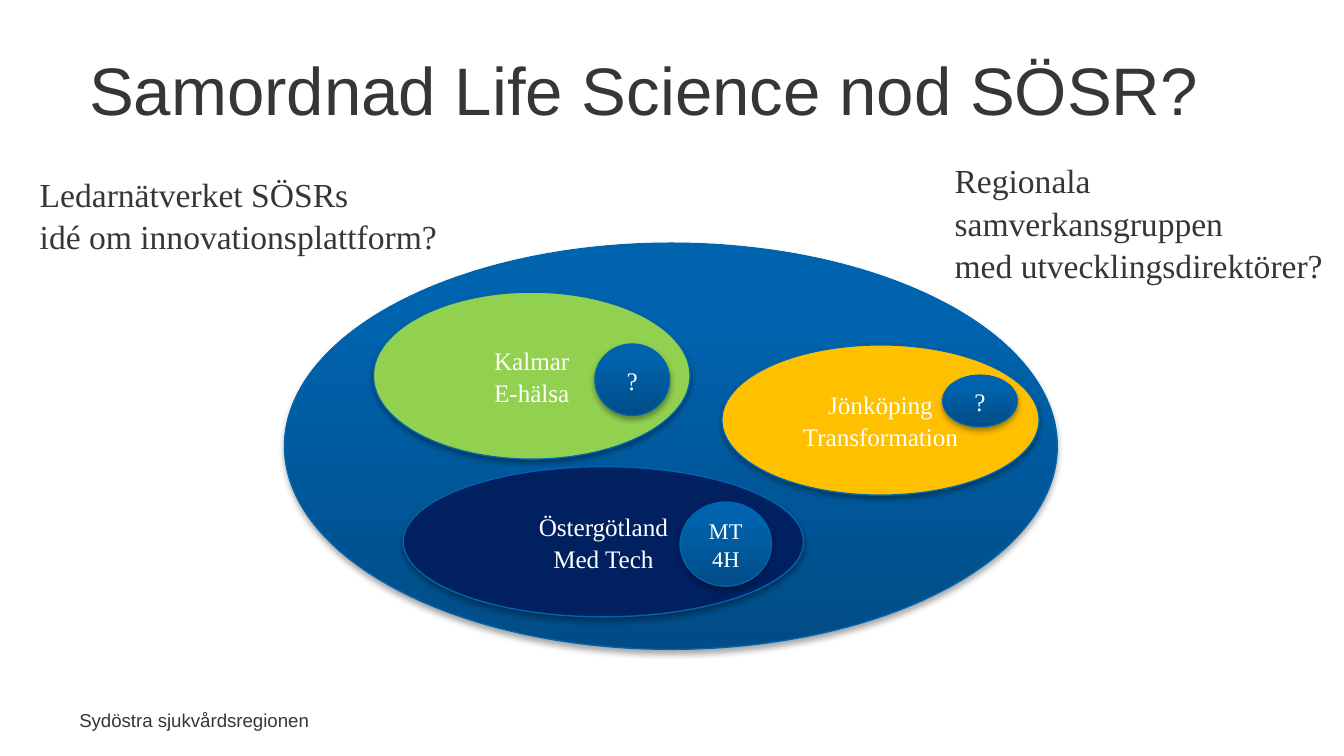
from dataclasses import dataclass

from lxml.etree import SubElement
from pptx import Presentation
from pptx.dml.color import RGBColor as Color
from pptx.enum.shapes import MSO_SHAPE as Shape
from pptx.enum.text import MSO_ANCHOR as Anchor, MSO_AUTO_SIZE as AutoSize, PP_ALIGN as Align
from pptx.oxml.ns import qn
from pptx.util import Pt


@dataclass(frozen=True)
class Theme:
    ink: str = "363636"
    white: str = "FFFFFF"
    outline: str = "0064AF"
    deep: str = "004C86"
    bright: str = "0063AD"
    green: str = "92D050"
    amber: str = "FFC000"
    navy: str = "002060"
    sans: str = "Arial"
    serif: str = "Times New Roman"
    title: float = 36
    note: float = 18
    label: float = 13.5
    small: float = 12
    footer: float = 10
    spacing: float = 1.05


THEME = Theme()


def write(frame, text, font, size, color, align=Align.LEFT, spacing=1.0):
    frame.text = text
    for para in frame.paragraphs:
        para.alignment = align
        para.line_spacing = spacing
        para.font.name = font
        para.font.size = Pt(size)
        para.font.color.rgb = Color.from_string(color)


def add_title(page, text, *bounds):
    title = page.shapes.title
    title.left, title.top, title.width, title.height = map(Pt, bounds)
    title.text_frame.vertical_anchor = Anchor.MIDDLE
    write(title.text_frame, text, THEME.sans, THEME.title, THEME.ink)


def add_text(page, text, bounds, font, size, **layout):
    box = page.shapes.add_textbox(*map(Pt, bounds))
    box.text_frame.word_wrap = False
    box.text_frame.auto_size = AutoSize.SHAPE_TO_FIT_TEXT
    write(box.text_frame, text, font, size, THEME.ink, **layout)


def add_shadow(shape):
    shape.shadow.inherit = False
    effects = shape._element.spPr.find(qn("a:effectLst"))
    shadow = SubElement(effects, qn("a:outerShdw"), blurRad=str(Pt(3.1)),
                        dist=str(Pt(1.8)), dir="5400000", rotWithShape="0")
    black = SubElement(shadow, qn("a:srgbClr"), val="000000")
    SubElement(black, qn("a:alpha"), val="35000")


def fill_ellipse(fill, color):
    if color:
        fill.solid()
        fill.fore_color.rgb = Color.from_string(color)
        return
    fill.gradient()
    fill.gradient_angle = 90
    stops = ((0, THEME.deep), (0.8, THEME.bright))
    for stop, (position, shade) in zip(fill.gradient_stops, stops):
        stop.position = position
        stop.color.rgb = Color.from_string(shade)


def add_ellipse(page, bounds, text="", color=None, size=THEME.label):
    ellipse = page.shapes.add_shape(Shape.OVAL, *map(Pt, bounds))
    fill_ellipse(ellipse.fill, color)
    ellipse.line.color.rgb = Color.from_string(THEME.outline)
    ellipse.line.width = Pt(0.75)
    add_shadow(ellipse)
    if text:
        ellipse.text_frame.vertical_anchor = Anchor.MIDDLE
        write(ellipse.text_frame, text, THEME.serif, size, THEME.white,
              Align.CENTER, THEME.spacing)


def main():
    deck = Presentation()
    deck.slide_width, deck.slide_height = Pt(720), Pt(405)
    page = deck.slides.add_slide(deck.slide_layouts[5])

    add_text(page, "Sydöstra sjukvårdsregionen", (34.5, 376, 138, 19.5),
             THEME.sans, THEME.footer, align=Align.RIGHT)
    add_title(page, "Samordnad Life Science nod SÖSR?", 40.5, 13.7, 648, 67.7)

    add_ellipse(page, (152.4, 130.3, 414, 217.6))
    add_ellipse(page, (200, 156.5, 169.7, 89.5), "Kalmar\nE-hälsa", THEME.green)
    add_ellipse(page, (386.7, 184.8, 170, 80.5), "Jönköping\nTransformation", THEME.amber)
    add_ellipse(page, (216, 250, 214.5, 80.5), "Östergötland\nMed Tech", THEME.navy)
    add_ellipse(page, (364.3, 269, 49, 45), "MT4H", size=THEME.small)
    add_ellipse(page, (318.7, 184.3, 40, 38.3), "?")
    add_ellipse(page, (505, 201, 40, 27.7), "?")

    notes = (
        ("Ledarnätverket SÖSRs\vidé om innovationsplattform?", (14.2, 88.6, 229.7, 51)),
        ("Regionala\vsamverkansgruppen\vmed utvecklingsdirektörer?", (504.3, 81.2, 214, 72.7)),
    )
    for text, bounds in notes:
        add_text(page, text, bounds, THEME.serif, THEME.note, spacing=THEME.spacing)

    deck.save("out.pptx")


if __name__ == "__main__":
    main()
